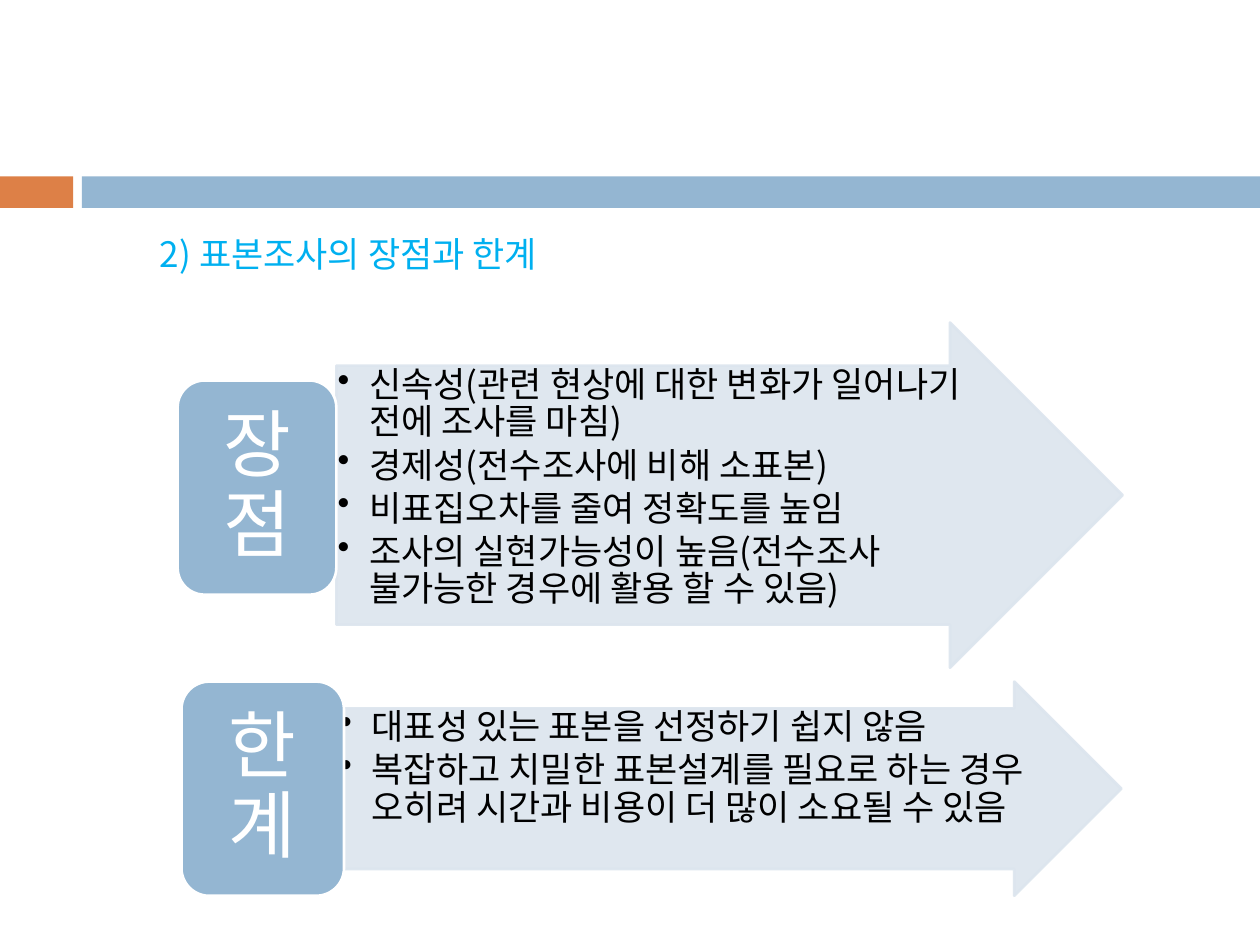
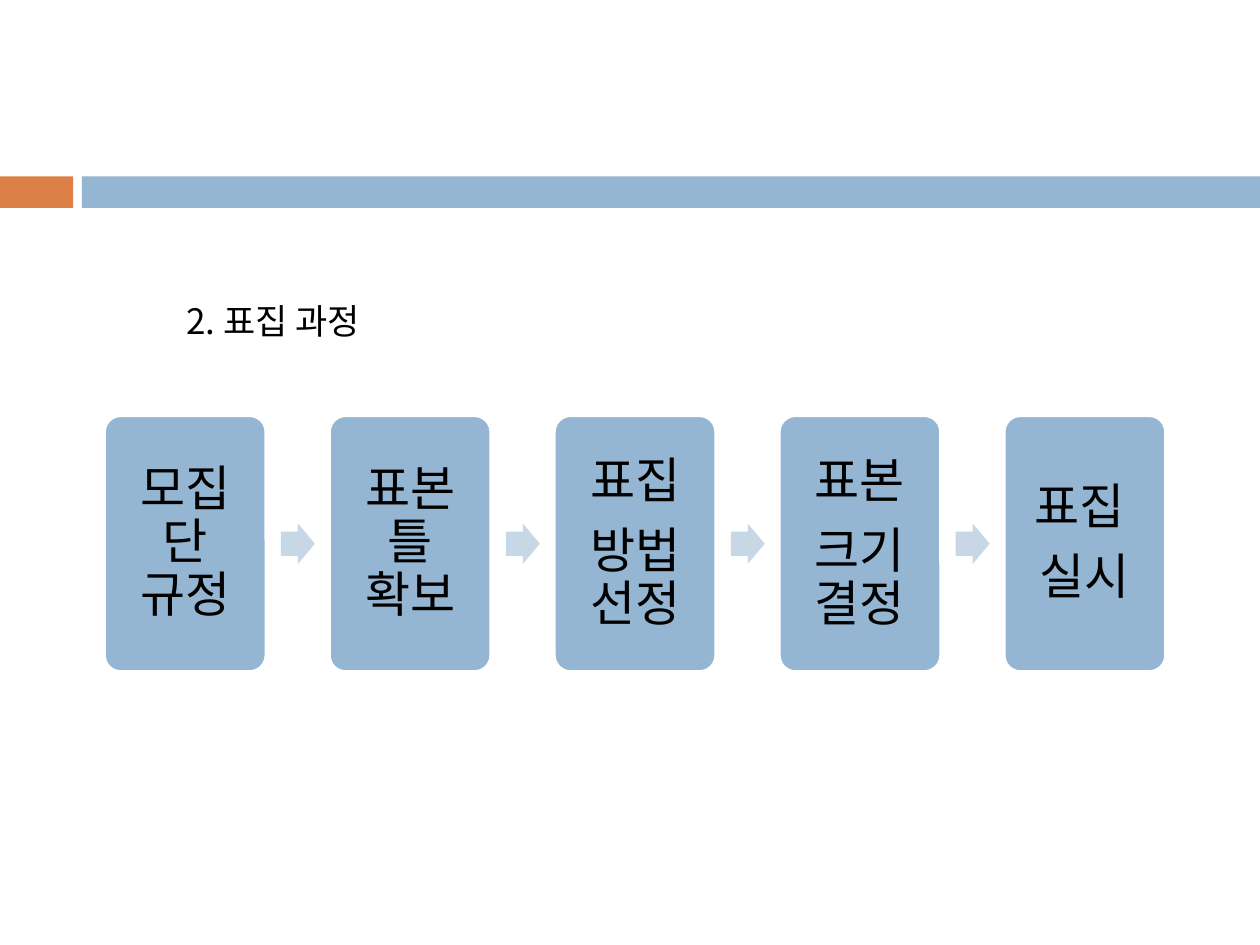
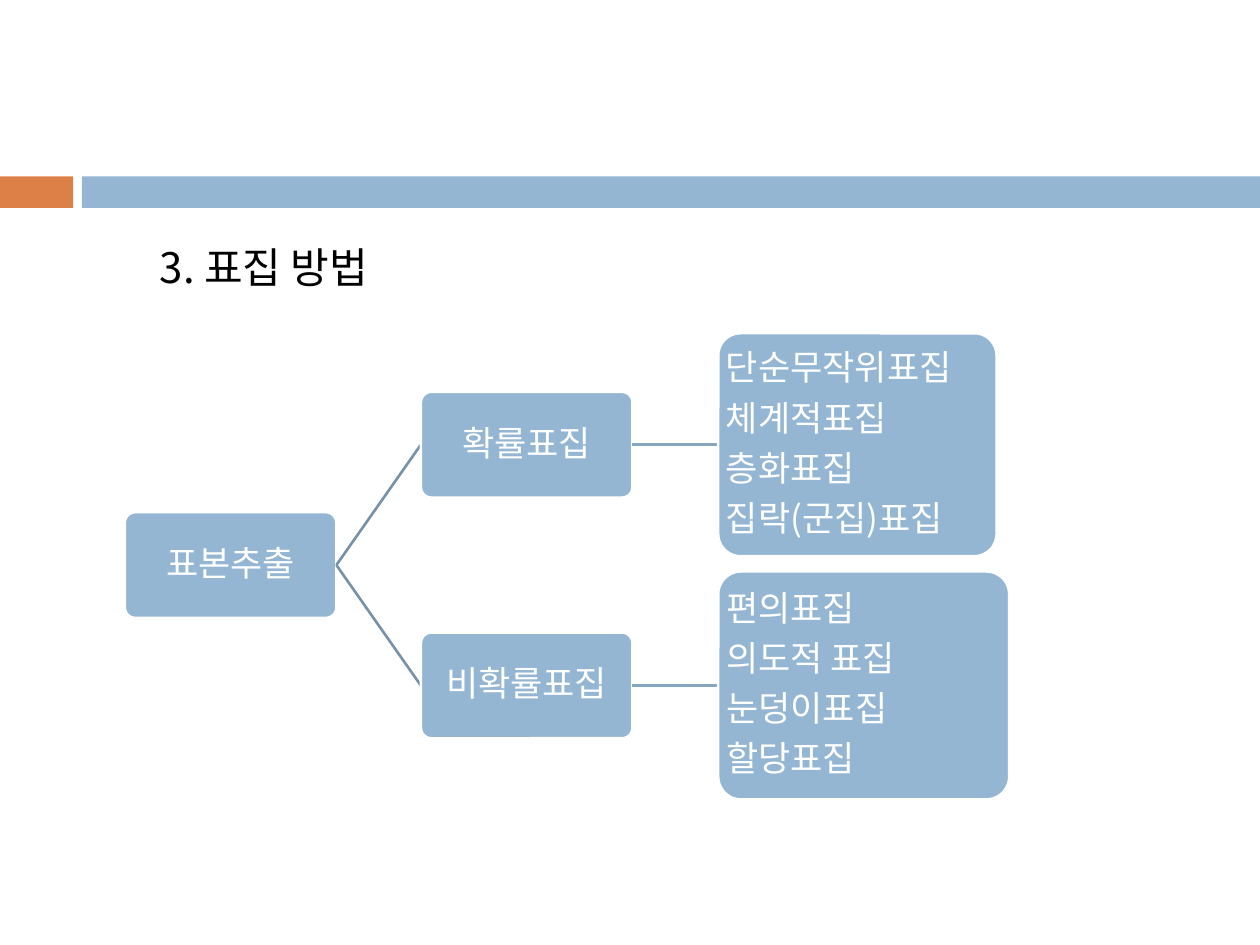
from lxml import etree
from pptx import Presentation
from pptx.dml.color import RGBColor
from pptx.enum.shapes import MSO_CONNECTOR, MSO_SHAPE
from pptx.enum.text import MSO_ANCHOR, PP_ALIGN
from pptx.oxml.ns import qn
from pptx.util import Inches, Pt

RECT, ROUND = MSO_SHAPE.RECTANGLE, MSO_SHAPE.ROUNDED_RECTANGLE
ARROW, LINE = MSO_SHAPE.RIGHT_ARROW, MSO_CONNECTOR.STRAIGHT
LEFT, CENTER = PP_ALIGN.LEFT, PP_ALIGN.CENTER
TOP, MIDDLE = MSO_ANCHOR.TOP, MSO_ANCHOR.MIDDLE

COLORS = {
    "orange": "DD8047", "blue": "94B6D2", "pale": "DCE5EE", "step": "C8D7E5",
    "fork": "7792A8", "link": "86A5BF", "cyan": "00B0F0",
    "black": "000000", "white": "FFFFFF",
}
NOTO, LATIN = "Noto Sans CJK KR", "Calibri"


def rgb(name):
    return RGBColor.from_string(COLORS[name])


def add_text(frame, lines, size, color, font=NOTO, align=LEFT, anchor=MIDDLE,
             inset=(0.01, 0.01), space=0.9, after=0, bullet=False):
    frame.word_wrap = True
    frame.vertical_anchor = anchor
    frame.margin_left = frame.margin_right = Inches(inset[0])
    frame.margin_top = frame.margin_bottom = Inches(inset[1])
    for i, line in enumerate(lines):
        para = frame.add_paragraph() if i else frame.paragraphs[0]
        para.alignment = align
        para.line_spacing = space
        para.space_after = Pt(size * after)
        if bullet:
            props = para._p.get_or_add_pPr()
            props.set("marL", str(Inches(0.25)))
            props.set("indent", str(-Inches(0.25)))
            etree.SubElement(props, qn("a:buChar")).set("char", "•")
        run = para.add_run()
        run.text = line
        run.font.size = Pt(size)
        run.font.name = font
        run.font.color.rgb = rgb(color)
        east = etree.SubElement(run._r.get_or_add_rPr(), qn("a:ea"))
        east.set("typeface", font)


def add_form(slide, kind, box, fill, line=None, adjust=(), alpha=None):
    form = slide.shapes.add_shape(kind, *map(Inches, box))
    form.shadow.inherit = False
    form.fill.solid()
    form.fill.fore_color.rgb = rgb(fill)
    if line:
        form.line.color.rgb = rgb(line)
        form.line.width = Pt(1.5)
    else:
        form.line.fill.background()
    for i, value in enumerate(adjust):
        form.adjustments[i] = value
    if alpha:
        for tint in form._element.spPr.iter(qn("a:srgbClr")):
            etree.SubElement(tint, qn("a:alpha")).set("val", str(alpha * 1000))
    return form


def add_card(slide, box, lines, size, color, adjust=(0.1,), **style):
    card = add_form(slide, ROUND, box, "blue", "white", adjust)
    add_text(card.text_frame, lines, size, color, after=0.35, **style)


def add_link(slide, start, end, color):
    link = slide.shapes.add_connector(LINE, *map(Inches, start + end))
    link.line.color.rgb = rgb(color)
    link.line.width = Pt(1.5)
    etree.SubElement(link._element.spPr, qn("a:effectLst"))


def add_page(deck, title, box, size, color):
    slide = deck.slides.add_slide(deck.slide_layouts[6])
    # Bands
    add_form(slide, RECT, (0, 1.4, 0.58, 0.25), "orange")
    add_form(slide, RECT, (0.65, 1.4, 9.35, 0.25), "blue")
    # Heading
    area = slide.shapes.add_textbox(*map(Inches, box))
    add_text(area.text_frame, [title], size, color, anchor=TOP,
             inset=(0.1, 0.05), space=1.0)
    return slide


def add_point(slide, box, badge, label, lines):
    """Arrow with bullets in the box; the badge is offset from its corner."""
    left, top = box[:2]
    arrow = add_form(slide, ARROW, box, "pale", "pale", (0.75, 0.5), 90)
    add_text(arrow.text_frame, lines, 20, "black", anchor=TOP, after=0.15,
             bullet=True)
    right, down, wide, high = badge
    place = (left + right, top + down, wide, high)
    add_card(slide, place, [label], 42, "white", (0.17,), font=LATIN,
             align=CENTER, inset=(0.17, 0.09))


def add_flow(slide, box, steps):
    """Equal cards across the box with an arrow in each gap."""
    left, top, width, height = box
    wide, tip, high = 1.28, 0.27, 0.32
    pitch = (width - wide) / (len(steps) - 1)
    for i, lines in enumerate(steps):
        x = left + i * pitch
        add_card(slide, (x, top, wide, height), lines, 28, "black",
                 align=CENTER, inset=(0.12, 0.12))
        if i < len(steps) - 1:
            place = (x + wide + 0.12, top + (height - high) / 2, tip, high)
            add_form(slide, ARROW, place, "step", adjust=(0.6, 0.5))


def add_tree(slide, box, root, branches):
    """Root card in the middle of the left side, one branch per row."""
    left, top, _, height = box
    wide, high = 1.68, 0.84
    rise = 1.91
    mid = top + height / 2

    def add_node(x, y, label):
        add_card(slide, (x, y - high / 2, wide, high), [label], 20, "white",
                 align=CENTER)

    add_node(left, mid, root)
    stem = left + wide
    twig = stem + 0.67
    leaf = twig + wide + 0.68
    for i, (label, lines, size) in enumerate(branches):
        y = mid + (i - 0.5) * rise
        add_link(slide, (stem, mid), (twig, y), "fork")
        add_node(twig, y, label)
        add_link(slide, (twig + wide, y), (leaf, y), "link")
        add_card(slide, (leaf, y - size[1] / 2, *size), lines, 20, "white")


def main():
    deck = Presentation()
    deck.slide_width, deck.slide_height = Inches(10), Inches(7.5)

    # Strengths and limits
    slide = add_page(deck, "2) 표본조사의 장점과 한계",
                     (1.17, 1.8, 7.89, 4.67), 20, "cyan")
    add_point(slide, (2.67, 2.56, 6.24, 2.74), (-1.26, 0.46, 1.26, 1.7), "장점", [
        "신속성(관련 현상에 대한 변화가 일어나기 전에 조사를 마침)",
        "경제성(전수조사에 비해 소표본)",
        "비표집오차를 줄여 정확도를 높임",
        "조사의 실현가능성이 높음(전수조사 불가능한 경우에 활용 할 수 있음)",
    ])
    add_point(slide, (2.69, 5.41, 6.21, 1.7), (-1.25, 0, 1.29, 1.7), "한계", [
        "대표성 있는 표본을 선정하기 쉽지 않음",
        "복잡하고 치밀한 표본설계를 필요로 하는 경우 오히려 시간과 비용이 더 많이 소요될 수 있음",
    ])

    # Sampling steps
    slide = add_page(deck, "2. 표집 과정", (1.38, 2.33, 3.94, 0.44), 20, "black")
    add_flow(slide, (0.83, 3.3, 8.42, 2.03), [
        ["모집단 규정"], ["표본틀 확보"], ["표집", "방법 선정"],
        ["표본", "크기 결정"], ["표집 ", "실시"],
    ])

    # Sampling methods
    slide = add_page(deck, "3. 표집 방법", (1.17, 1.87, 7.89, 4.9), 24, "black")
    add_tree(slide, (0.99, 2.63, 7.02, 3.71), "표본추출", [
        ("확률표집",
         ["단순무작위표집", "체계적표집", "층화표집", "집락(군집)표집"],
         (2.21, 1.77)),
        ("비확률표집",
         ["편의표집", "의도적 표집", "눈덩이표집", "할당표집"],
         (2.31, 1.81)),
    ])
    deck.save("out.pptx")


if __name__ == "__main__":
    main()
